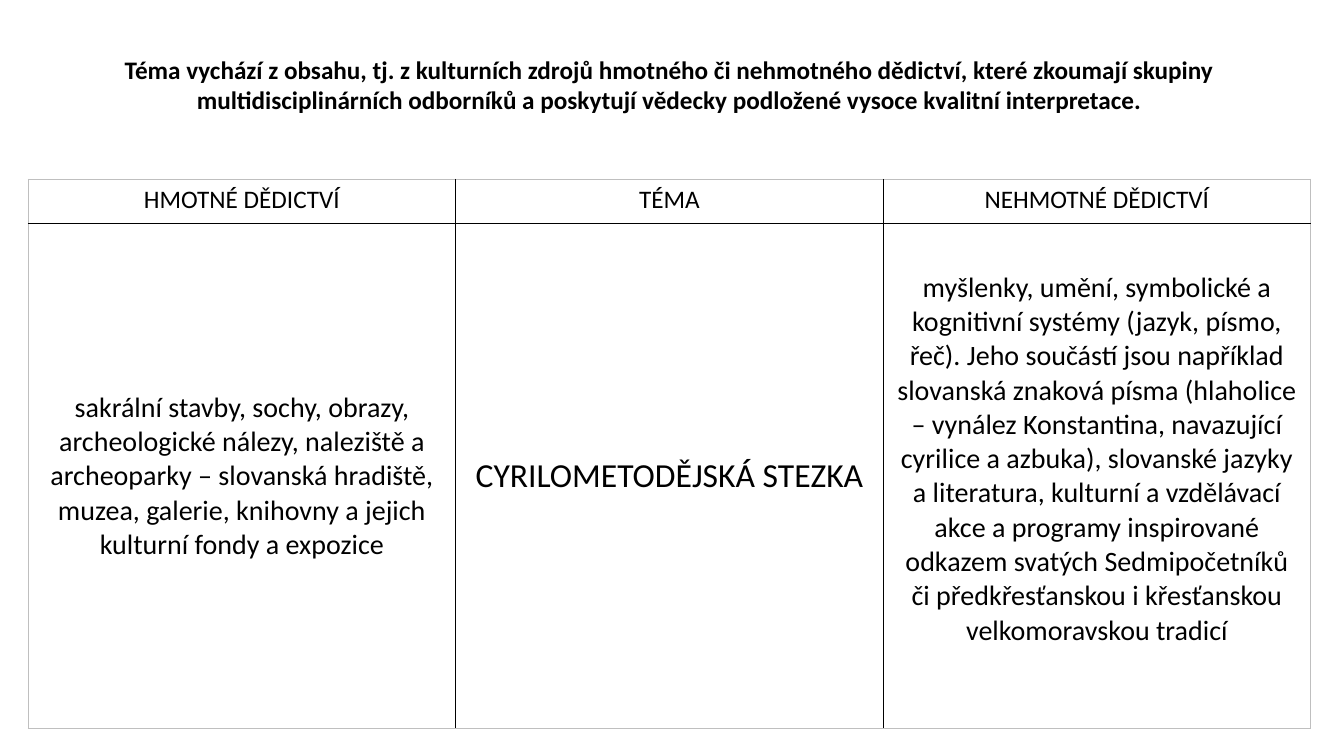
from lxml.etree import SubElement
from pptx import Presentation
from pptx.dml.color import RGBColor
from pptx.enum.text import MSO_ANCHOR, PP_ALIGN
from pptx.oxml.ns import qn
from pptx.util import Inches, Pt

LEFT, WIDTH = 0.28, 12.72
ROW_HEIGHTS = [0.44, 5.01]
TITLE = ("Téma vychází z obsahu, tj. z kulturních zdrojů hmotného či nehmotného dědictví, "
         "které zkoumají skupiny multidisciplinárních odborníků a poskytují vědecky "
         "podložené vysoce kvalitní interpretace.")
HEADINGS = ["HMOTNÉ DĚDICTVÍ", "TÉMA", "NEHMOTNÉ DĚDICTVÍ"]
TANGIBLE = [
    "sakrální stavby, sochy, obrazy, archeologické nálezy, naleziště a archeoparky – "
    "slovanská hradiště,",
    "muzea, galerie, knihovny a jejich kulturní fondy a expozice",
]
INTANGIBLE = [
    "myšlenky, umění, symbolické a kognitivní systémy (jazyk, písmo, řeč). Jeho součástí "
    "jsou například slovanská znaková písma (hlaholice – vynález Konstantina, navazující "
    "cyrilice a azbuka), slovanské jazyky a literatura, kulturní a vzdělávací akce a "
    "programy inspirované odkazem svatých Sedmipočetníků či předkřesťanskou i křesťanskou "
    "velkomoravskou tradicí",
]
# Each body cell: paragraphs, text size, bottom margin
BODY = [
    (TANGIBLE, 20, 0.05),
    (["CYRILOMETODĚJSKÁ STEZKA"], 24, 0.05),
    (INTANGIBLE, 20, 0.39),
]


def color(value):
    return RGBColor.from_string(value)


class SlideBuilder:
    font = "Calibri"
    ink = "000000"
    paper = "FFFFFF"
    inner_border = ("000000", 1)
    outer_border = ("BFBFBF", 0.75)

    def __init__(self, page):
        self.page = page

    def fill_text(self, frame, texts, size, bold=False):
        for index, text in enumerate(texts):
            para = frame.paragraphs[0] if index == 0 else frame.add_paragraph()
            para.text = text
            para.alignment = PP_ALIGN.CENTER
            para.font.name = self.font
            para.font.size = Pt(size)
            para.font.bold = bold
            para.font.color.rgb = color(self.ink)

    def text_box(self, left, top, width, height, text, size, bold=False):
        box = self.page.shapes.add_textbox(*map(Inches, (left, top, width, height)))
        box.text_frame.word_wrap = True
        self.fill_text(box.text_frame, [text], size, bold)

    def table(self, left, top, width, row_heights, columns):
        frame = self.page.shapes.add_table(
            len(row_heights), columns,
            *map(Inches, (left, top, width, sum(row_heights))))
        table = frame.table
        table.first_row = table.horz_banding = False
        for row, height in zip(table.rows, row_heights):
            row.height = Inches(height)
        for column in table.columns:
            column.width = Inches(width / columns)
        for row in range(len(row_heights)):
            for column in range(columns):
                cell = table.cell(row, column)
                self.borders(cell, {
                    "a:lnL": column == 0,
                    "a:lnR": column == columns - 1,
                    "a:lnT": row == 0,
                    "a:lnB": row == len(row_heights) - 1,
                })
                cell.fill.solid()
                cell.fill.fore_color.rgb = color(self.paper)
        return table

    def borders(self, cell, outer_sides):
        """Draw each side in the outer or the inner border style."""
        properties = cell._tc.get_or_add_tcPr()
        for tag, is_outer in outer_sides.items():
            shade, points = self.outer_border if is_outer else self.inner_border
            line = SubElement(properties, qn(tag), w=str(Pt(points)))
            fill = SubElement(line, qn("a:solidFill"))
            SubElement(fill, qn("a:srgbClr"), val=shade)

    def cell_text(self, cell, texts, size, anchor=MSO_ANCHOR.TOP, bottom=0.05):
        cell.vertical_anchor = anchor
        cell.margin_bottom = Inches(bottom)
        self.fill_text(cell.text_frame, texts, size)


def main():
    deck = Presentation()
    deck.slide_width, deck.slide_height = Inches(13.33), Inches(7.5)
    builder = SlideBuilder(deck.slides.add_slide(deck.slide_layouts[6]))

    table = builder.table(LEFT, 1.78, WIDTH, ROW_HEIGHTS, len(HEADINGS))
    for column, heading in enumerate(HEADINGS):
        builder.cell_text(table.cell(0, column), [heading], 18)
    for column, (texts, size, bottom) in enumerate(BODY):
        builder.cell_text(table.cell(1, column), texts, size, MSO_ANCHOR.MIDDLE, bottom)

    builder.text_box(LEFT, 0.49, WIDTH, 0.71, TITLE, 18, bold=True)
    deck.save("out.pptx")


if __name__ == "__main__":
    main()
